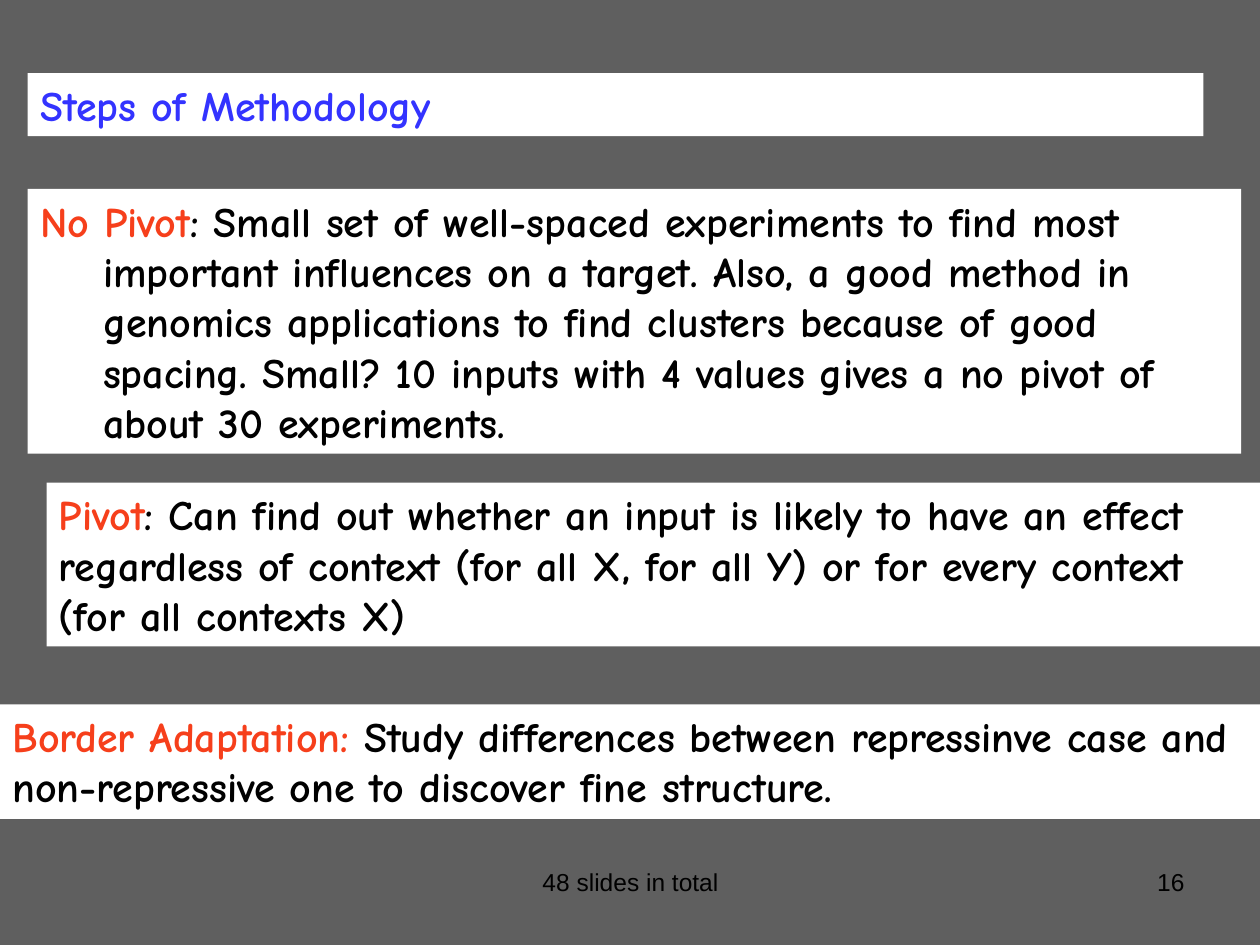
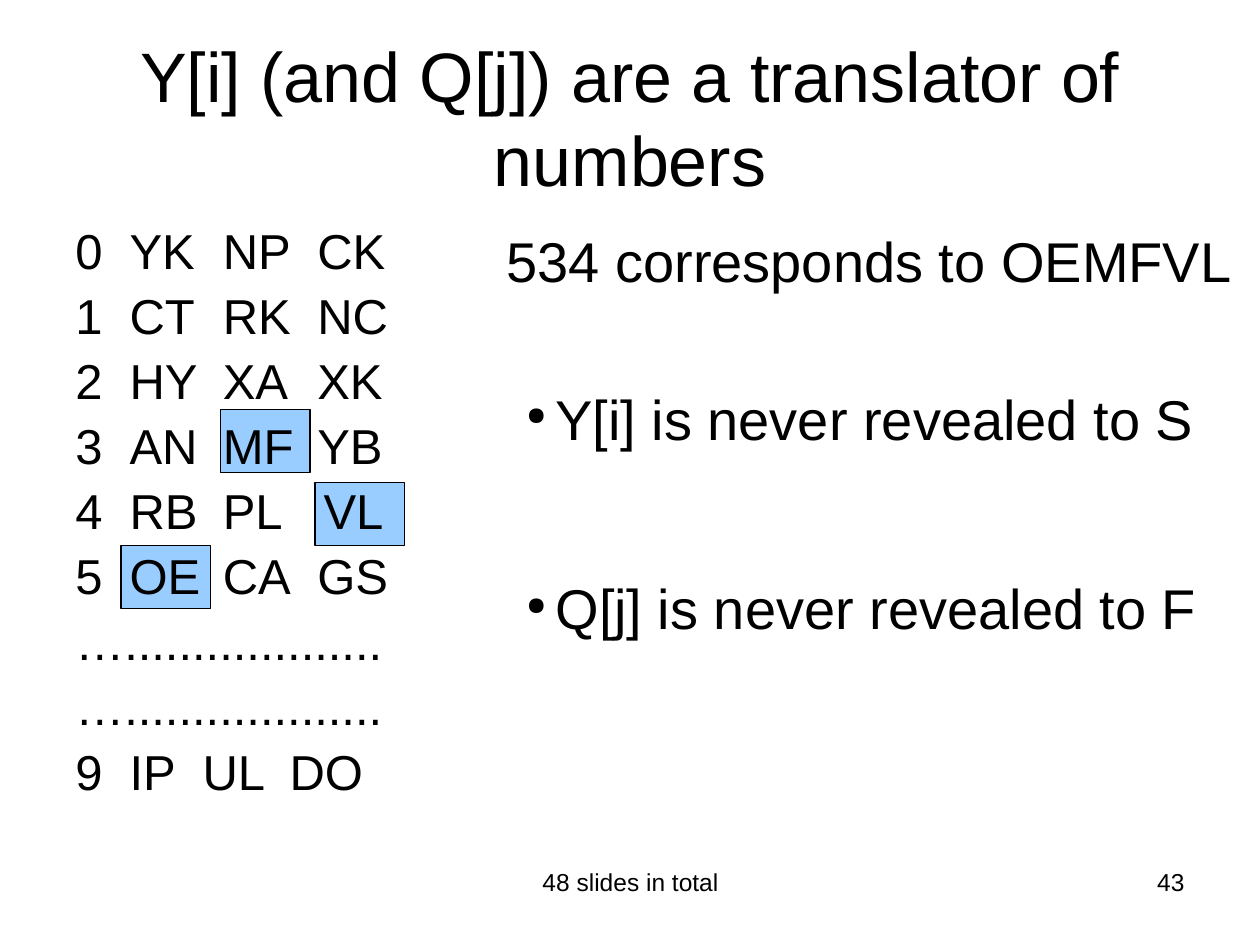
import pptx
import pptx.dml.color
import pptx.enum.shapes
import pptx.enum.text
import pptx.oxml
import pptx.oxml.ns
import pptx.util

COLORS = {
    "gray": "5F5F5F",
    "white": "FFFFFF",
    "black": "000000",
    "blue": "3333FF",
    "red": "F63F1B",
    "sky": "99CCFF",
}
SCALE = 9144
ALIGN = pptx.enum.text.PP_ALIGN
ANCHOR = pptx.enum.text.MSO_ANCHOR
FIT = pptx.enum.text.MSO_AUTO_SIZE
RECT = pptx.enum.shapes.MSO_SHAPE.RECTANGLE


def px(count):
    return pptx.util.Emu(count * SCALE)


def color(name):
    return pptx.dml.color.RGBColor.from_string(COLORS[name])


def paint(shape, name):
    shape.fill.solid()
    shape.fill.fore_color.rgb = color(name)


def add_node(props, tag, **attrs):
    node = pptx.oxml.parse_xml(f"<a:{tag} {pptx.oxml.ns.nsdecls('a')}/>")
    for key, value in attrs.items():
        node.set(key, str(value))
    props.append(node)
    return node


class Deck:
    plain = ("Arial", False)
    comic = ("Comic Neue", True)

    def __init__(self):
        self.show = pptx.Presentation()
        self.show.slide_width = px(1000)
        self.show.slide_height = px(750)
        self.slide = None

    def start(self, back, number):
        self.slide = self.show.slides.add_slide(self.show.slide_layouts[5])
        fill = self.slide.background.fill
        fill.solid()
        fill.fore_color.rgb = color(back)
        self.text((342, 683, 317, 52), "48 slides in total", 14, align=ALIGN.CENTER)
        self.text((717, 683, 233, 52), str(number), 14, align=ALIGN.RIGHT)

    def frame(self, shape, anchor=ANCHOR.TOP, fit=FIT.NONE):
        frame = shape.text_frame
        frame.word_wrap = True
        frame.auto_size = fit
        frame.vertical_anchor = anchor
        return frame

    def style(self, para, size, face, align=ALIGN.LEFT):
        para.alignment = align
        para.font.name, para.font.bold = face
        para.font.size = pptx.util.Pt(size)

    def title(self, box, words, size, face, hue, align, anchor):
        shape = self.slide.shapes.title
        shape.left, shape.top, shape.width, shape.height = map(px, box)
        para = self.frame(shape, anchor).paragraphs[0]
        para.text = words
        self.style(para, size, face, align)
        para.font.color.rgb = color(hue)
        return shape

    def text(self, box, words, size, align=ALIGN.LEFT):
        frame = self.frame(self.slide.shapes.add_textbox(*map(px, box)))
        para = frame.paragraphs[0]
        para.text = words
        self.style(para, size, self.plain, align)
        para.font.color.rgb = color("black")

    def bullets(self, box, items, size, gap):
        frame = self.frame(self.slide.shapes.add_textbox(*map(px, box)))
        for index, item in enumerate(items):
            para = frame.add_paragraph() if index else frame.paragraphs[0]
            para.text = item
            para.space_before = pptx.util.Pt(gap if index else 0)
            props = para._p.get_or_add_pPr()
            props.set("marL", str(px(23)))
            props.set("indent", str(px(-23)))
            add_node(props, "buSzPct", val=45000)
            add_node(props, "buChar", char="●")
            self.style(para, size, self.plain)
            para.font.color.rgb = color("black")

    def grid(self, box, rows, size, stops, shifts):
        frame = self.frame(self.slide.shapes.add_textbox(*map(px, box)))
        for index, row in enumerate(rows):
            para = frame.add_paragraph() if index else frame.paragraphs[0]
            para.add_run().text = "\t".join(row)
            para.line_spacing = 0.9
            para.space_before = pptx.util.Pt(7)
            tabs = add_node(para._p.get_or_add_pPr(), "tabLst")
            for stop in shifts.get(index, stops):
                add_node(tabs, "tab", pos=px(stop), algn="l")
            self.style(para, size, self.plain)
            para.font.color.rgb = color("black")

    def rect(self, box, fill, line=None):
        shape = self.slide.shapes.add_shape(RECT, *map(px, box))
        shape.shadow.inherit = False
        paint(shape, fill)
        if line:
            shape.line.color.rgb = color(line)
            shape.line.width = pptx.util.Pt(0.75)
        else:
            shape.line.fill.background()
        return shape

    def panel(self, box, label, words, hang=0):
        shape = self.rect(box, "white")
        para = self.frame(shape, fit=FIT.SHAPE_TO_FIT_TEXT).paragraphs[0]
        for part, hue in ((label, "red"), (words, "black")):
            run = para.add_run()
            run.text = part
            run.font.color.rgb = color(hue)
        if hang:
            props = para._p.get_or_add_pPr()
            props.set("marL", str(px(hang)))
            props.set("indent", str(px(-hang)))
        self.style(para, 24, self.comic)


def add_steps(deck):
    deck.start("gray", 16)
    head = deck.title((22, 58, 933, 50), "Steps of Methodology", 24,
                      deck.comic, "blue", ALIGN.LEFT, ANCHOR.TOP)
    paint(head, "white")
    deck.panel(
        (22, 150, 963, 210), "No Pivot",
        ": Small set of well-spaced experiments to find most important "
        "influences on a target. Also, a good method in genomics applications "
        "to find clusters because of good spacing. Small? 10 inputs with 4 "
        "values gives a no pivot of about 30 experiments.", hang=50)
    deck.panel(
        (37, 383, 963, 130), "Pivot",
        ": Can find out whether an input is likely to have an effect regardless "
        "of context (for all X, for all Y) or for every context "
        "(for all contexts X)")
    deck.panel(
        (0, 559, 1000, 91), "Border Adaptation:",
        " Study differences between repressinve case and non-repressive one "
        "to discover fine structure.")


def add_codes(deck):
    deck.start("white", 43)
    deck.title((50, 30, 900, 125), "Y[i] (and Q[j]) are a translator of numbers",
               40, deck.plain, "black", ALIGN.CENTER, ANCHOR.MIDDLE)
    for left, top in ((250, 383), (175, 325), (96, 433)):
        deck.rect((left, top, 71, 50), "sky", "black")
    dots = ("…...................",)
    rows = (
        ("0", "YK", "NP", "CK"),
        ("1", "CT", "RK", "NC"),
        ("2", "HY", "XA", "XK"),
        ("3", "AN", "MF", "YB"),
        ("4", "RB", "PL", "VL"),
        ("5", "OE", "CA", "GS"),
        dots,
        dots,
        ("9", "IP", "UL", "DO"),
    )
    deck.grid((50, 175, 950, 533), rows, 28, (43, 117, 192),
              {4: (43, 117, 197), 8: (43, 101, 170)})
    deck.text((392, 175, 608, 108), "534 corresponds to OEMFVL", 32)
    deck.bullets((408, 300, 558, 408),
                 ("Y[i] is never revealed to S", "Q[j] is never revealed to F"),
                 32, 70)


def main():
    deck = Deck()
    add_steps(deck)
    add_codes(deck)
    deck.show.save("out.pptx")


if __name__ == "__main__":
    main()
